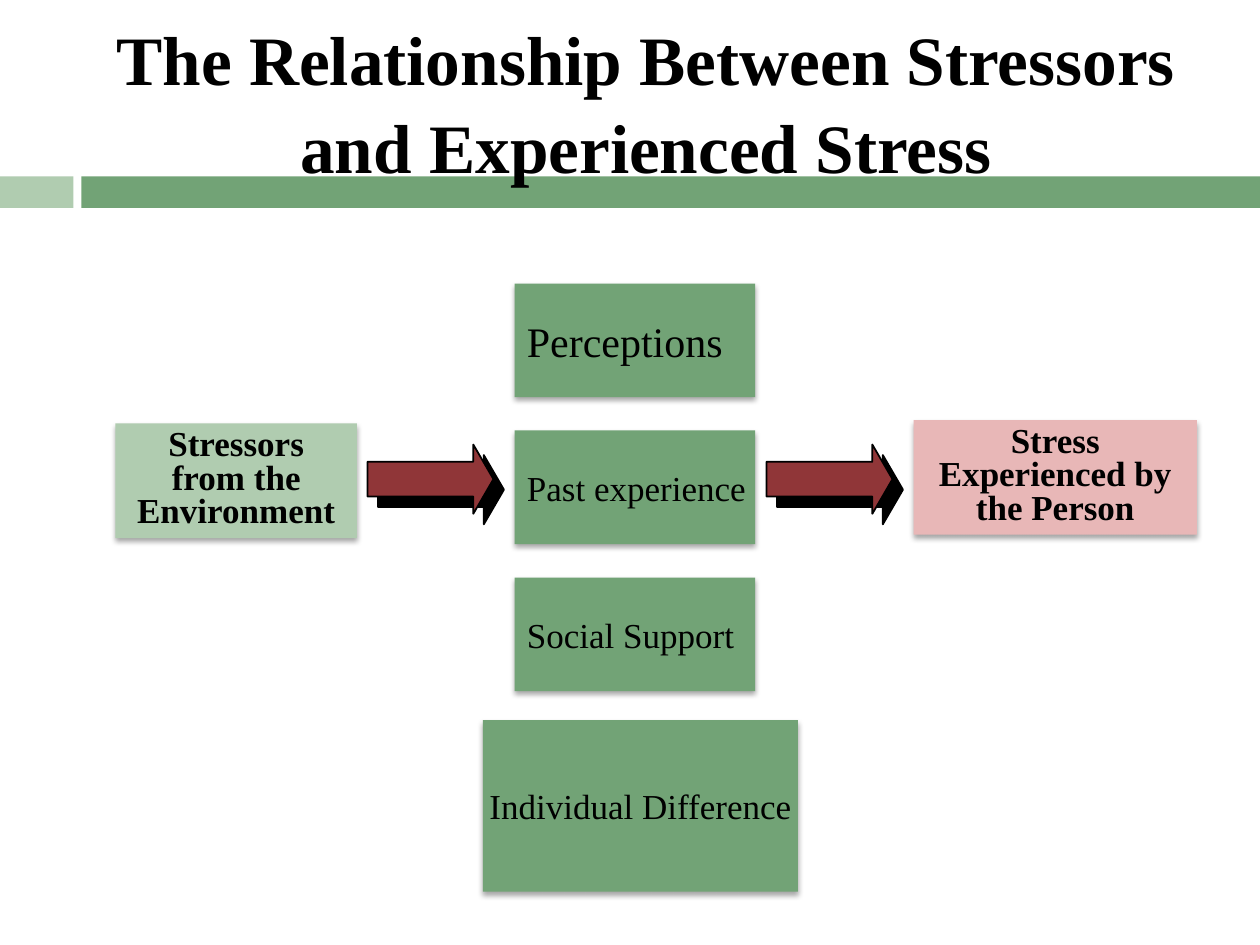
"""Build a slide relating stressors to experienced stress."""
from lxml.etree import SubElement
from pptx import Presentation
from pptx.dml.color import RGBColor
from pptx.enum.shapes import MSO_SHAPE as Shape
from pptx.enum.text import MSO_ANCHOR as Anchor, PP_ALIGN as Align
from pptx.oxml.ns import qn
from pptx.util import Pt

FONT = "Times New Roman"
BLACK = RGBColor(0, 0, 0)
GREEN = RGBColor(0x72, 0xA3, 0x76)
PALE_GREEN = RGBColor(0xB0, 0xCC, 0xB0)
PINK = RGBColor(0xE8, 0xB7, 0xB7)
RED = RGBColor(0x90, 0x36, 0x38)

TITLE = "The Relationship Between Stressors\vand Experienced Stress"
BARS = [((0, 100.8, 42, 18), PALE_GREEN), ((46.5, 100.8, 673.5, 18), GREEN)]
MODERATORS = [("Perceptions", 24), ("Past experience", 20), ("Social Support", 20)]
DIFFERENCE = ("Individual Difference", (276, 411.5, 180, 98))
ENDS = [
    ("Stressors from the Environment", (66, 242, 138, 65.5), PALE_GREEN),
    ("Stress Experienced by the Person", (522, 240, 162, 65.5), PINK),
]
ARROW_LEFTS = [210, 438]
COLUMN_LEFT, COLUMN_TOP, COLUMN_STEP = 294, 162, 84
BOX_WIDTH, BOX_HEIGHT = 137.5, 65
BOX_SHADOW = dict(opacity=35, blur=3, distance=2, angle=90)
ARROW_SHADOW = dict(opacity=100, blur=0, distance=8.5, angle=45)


def add_shape(page, kind, place, fill, shadow=None):
    shape = page.shapes.add_shape(kind, *map(Pt, place))
    shape.fill.solid()
    shape.fill.fore_color.rgb = fill
    shape.line.fill.background()
    shape.shadow.inherit = False
    if shadow:
        effects = shape._element.spPr.find(qn("a:effectLst"))
        outer = SubElement(
            effects, qn("a:outerShdw"), blurRad=str(Pt(shadow["blur"])),
            dist=str(Pt(shadow["distance"])), dir=str(shadow["angle"] * 60000),
            algn="ctr", rotWithShape="0")
        color = SubElement(outer, qn("a:srgbClr"), val=str(BLACK))
        SubElement(color, qn("a:alpha"), val=str(shadow["opacity"] * 1000))
    return shape


def write(shape, text, size, align, anchor=Anchor.MIDDLE, bold=False, spacing=None):
    frame = shape.text_frame
    frame.word_wrap = True
    frame.vertical_anchor = anchor
    frame.text = text
    para = frame.paragraphs[0]
    para.alignment = align
    para.line_spacing = spacing
    for span in para.runs:
        span.font.name = FONT
        span.font.size = Pt(size)
        span.font.bold = bold
        span.font.color.rgb = BLACK
    return frame


def main():
    deck = Presentation()
    deck.slide_width, deck.slide_height = Pt(720), Pt(540)
    page = deck.slides.add_slide(deck.slide_layouts[6])

    for place, fill in BARS:
        add_shape(page, Shape.RECTANGLE, place, fill)
    title = page.shapes.add_textbox(*map(Pt, (48, 18, 642.5, 78)))
    write(title, TITLE, 39.6, Align.CENTER, bold=True, spacing=1.05)

    for left in ARROW_LEFTS:
        arrow = add_shape(page, Shape.RIGHT_ARROW, (left, 254, 72, 39.6), RED, ARROW_SHADOW)
        arrow.adjustments[0], arrow.adjustments[1] = 0.5, 0.29
        arrow.line.color.rgb = BLACK
        arrow.line.width = Pt(1)

    for row, (text, size) in enumerate(MODERATORS):
        place = (COLUMN_LEFT, COLUMN_TOP + row * COLUMN_STEP, BOX_WIDTH, BOX_HEIGHT)
        box = add_shape(page, Shape.RECTANGLE, place, GREEN, BOX_SHADOW)
        write(box, text, size, Align.LEFT).margin_right = 0

    text, place = DIFFERENCE
    box = add_shape(page, Shape.RECTANGLE, place, GREEN, BOX_SHADOW)
    frame = write(box, text, 20, Align.CENTER)
    frame.margin_left = frame.margin_right = 0

    for text, place, fill in ENDS:
        box = add_shape(page, Shape.RECTANGLE, place, fill, BOX_SHADOW)
        write(box, text, 20, Align.CENTER, Anchor.TOP, bold=True, spacing=0.8)

    deck.save("out.pptx")


if __name__ == "__main__":
    main()
